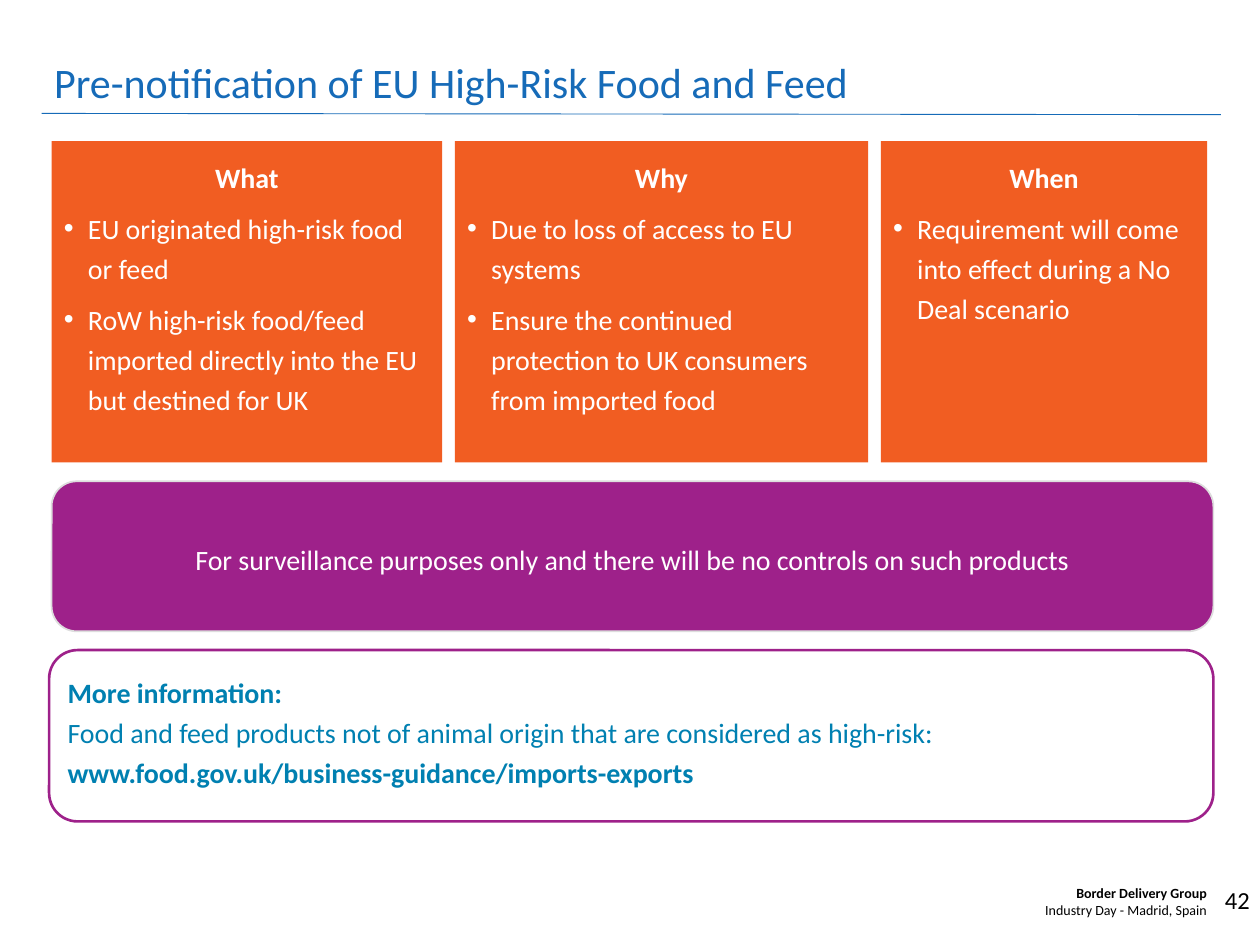
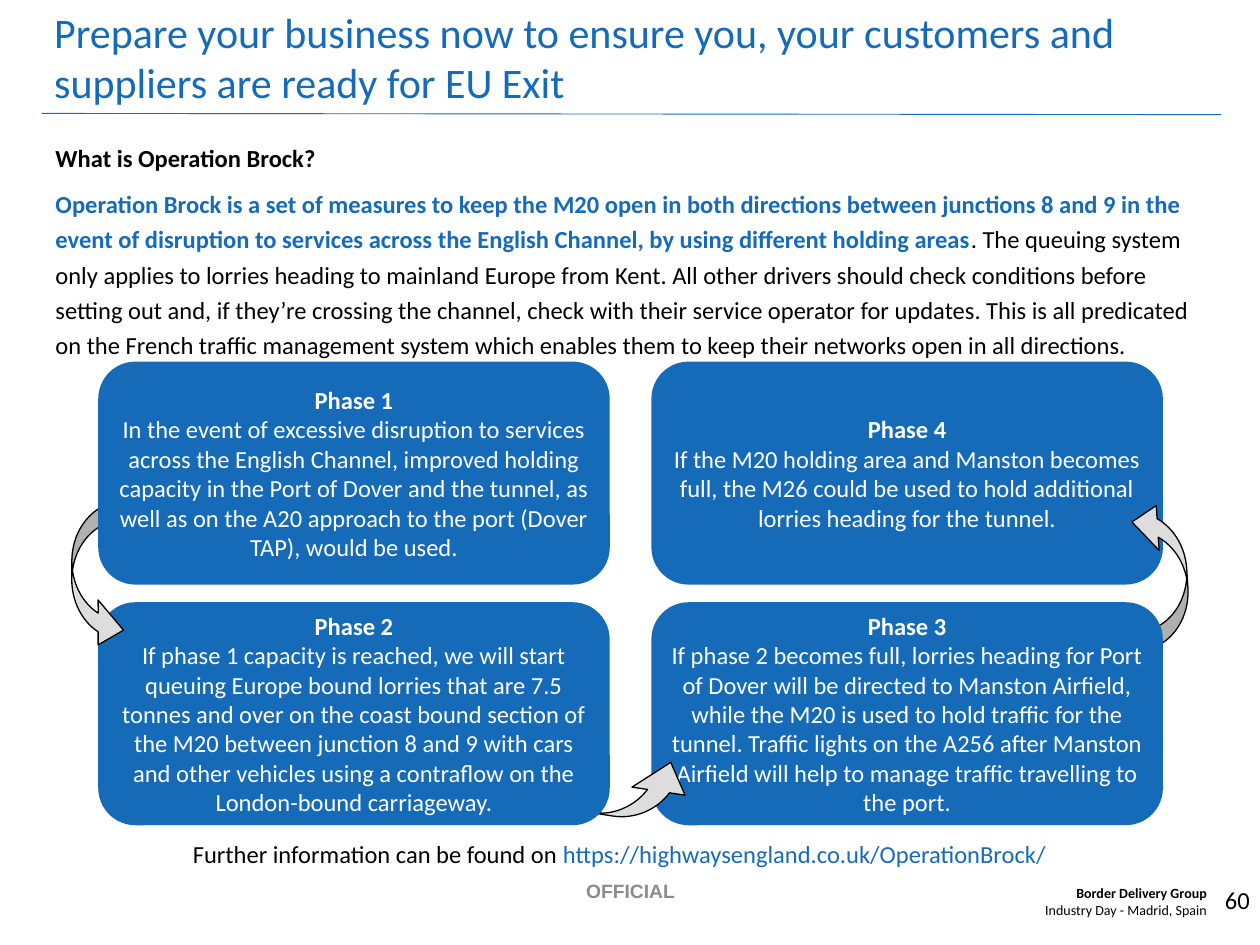
from dataclasses import dataclass
from typing import NamedTuple, Optional, Sequence

from lxml import etree
from pptx import Presentation
from pptx import util as u
from pptx.dml.color import RGBColor
from pptx.enum import shapes, text
from pptx.oxml import ns
from pptx.shapes.autoshape import Shape
from pptx.slide import Slide
from pptx.text.text import TextFrame

LEFT, CENTER, RIGHT = text.PP_ALIGN.LEFT, text.PP_ALIGN.CENTER, text.PP_ALIGN.RIGHT
TOP, MIDDLE, BOTTOM = text.MSO_ANCHOR.TOP, text.MSO_ANCHOR.MIDDLE, text.MSO_ANCHOR.BOTTOM
RECTANGLE = shapes.MSO_SHAPE.RECTANGLE
ROUNDED = shapes.MSO_SHAPE.ROUNDED_RECTANGLE
CURVED_ARROW = shapes.MSO_SHAPE.CURVED_RIGHT_ARROW


@dataclass(frozen=True)
class Theme:
    font: str = "Calibri"
    marking_font: str = "Arial"
    blue: str = "166BB8"
    teal: str = "0080B1"
    orange: str = "F15D22"
    purple: str = "9E218A"
    silver: str = "DDDDDD"
    grey: str = "8C8C8C"
    black: str = "000000"
    white: str = "FFFFFF"
    title: int = 24
    panel: int = 16
    body: int = 14
    marking: int = 11
    footer: int = 8


THEME = Theme()


class Area(NamedTuple):
    left: float
    top: float
    width: float
    height: float


class Span(NamedTuple):
    words: str
    bold: bool = False
    color: Optional[str] = None


class Line(NamedTuple):
    spans: Sequence[Span]
    align: text.PP_ALIGN = LEFT
    bullet: bool = False


class Column(NamedTuple):
    heading: str
    points: Sequence[str]
    width: float


class Arrow(NamedTuple):
    area: Area
    rotation: float


class Phase(NamedTuple):
    number: int
    column: int
    row: int
    details: str
    arrow: Optional[Arrow] = None


TITLE_AREA = Area(0.33, 0.15, 9.35, 0.75)

COLUMNS = [
    Column("What", ["EU originated high-risk food or feed",
                    "RoW high-risk food/feed imported directly into the EU but destined for UK"], 3.1),
    Column("Why", ["Due to loss of access to EU systems",
                   "Ensure the continued protection to UK consumers from imported food"], 3.28),
    Column("When", ["Requirement will come into effect during a No Deal scenario"], 2.59),
]

PHASES = [
    Phase(4, 1, 0, "If the M20 holding area and Manston becomes full, the M26 could be used to hold "
          "additional lorries heading for the tunnel.", Arrow(Area(9.01, 3.95, 0.41, 1.2), 176.3)),
    Phase(3, 1, 1, "If phase 2 becomes full, lorries heading for Port of Dover will be directed to "
          "Manston Airfield, while the M20 is used to hold traffic for the tunnel. Traffic lights on "
          "the A256 after Manston Airfield will help to manage traffic travelling to the port.",
          Arrow(Area(4.63, 5.6, 0.49, 1.26), 278.7)),
    Phase(2, 0, 1, "If phase 1 capacity is reached, we will start queuing Europe bound lorries that "
          "are 7.5 tonnes and over on the coast bound section of the M20 between junction 8 and 9 "
          "with cars and other vehicles using a contraflow on the London-bound carriageway.",
          Arrow(Area(0.57, 3.98, 0.41, 1.2), 0)),
    Phase(1, 0, 0, "In the event of excessive disruption to services across the English Channel, "
          "improved holding capacity in the Port of Dover and the tunnel, as well as on the A20 "
          "approach to the port (Dover TAP), would be used."),
]


def inches(area: Area) -> list[u.Length]:
    return [u.Inches(length) for length in area]


def move(placeholder: Shape, area: Area) -> None:
    placeholder.left, placeholder.top, placeholder.width, placeholder.height = inches(area)


def set_bullet(paragraph, bullet: bool) -> None:
    properties = paragraph._p.get_or_add_pPr()
    indent = u.Inches(0.19) if bullet else 0
    properties.set("marL", str(indent))
    properties.set("indent", str(-indent))
    if bullet:
        etree.SubElement(properties, ns.qn("a:buFont")).set("typeface", THEME.marking_font)
        etree.SubElement(properties, ns.qn("a:buChar")).set("char", "•")
    else:
        etree.SubElement(properties, ns.qn("a:buNone"))


def write(frame: TextFrame, lines: Sequence[Line], *, size: int, color: str,
          font: str = THEME.font, anchor: text.MSO_ANCHOR = TOP,
          insets: tuple[float, float] = (0.1, 0.05), spacing: float = 1.0,
          after: int = 0, wrap: bool = True) -> None:
    frame.word_wrap = wrap
    frame.auto_size = text.MSO_AUTO_SIZE.NONE
    frame.vertical_anchor = anchor
    frame.margin_left = frame.margin_right = u.Inches(insets[0])
    frame.margin_top = frame.margin_bottom = u.Inches(insets[1])
    for index, line in enumerate(lines):
        paragraph = frame.add_paragraph() if index else frame.paragraphs[0]
        set_bullet(paragraph, line.bullet)
        paragraph.alignment = line.align
        paragraph.line_spacing = spacing
        paragraph.space_before = u.Pt(0)
        paragraph.space_after = u.Pt(after)
        for span in line.spans:
            run = paragraph.add_run()
            run.text = span.words.rstrip("\n")
            run.font.name = font
            run.font.size = u.Pt(size)
            run.font.bold = span.bold
            run.font.color.rgb = RGBColor.from_string(span.color or color)
            if span.words.endswith("\n"):
                paragraph.add_line_break()


def add_panel(slide: Slide, kind: shapes.MSO_SHAPE, area: Area, fill: Optional[str] = None,
              outline: Optional[str] = None, weight: float = 1) -> Shape:
    panel = slide.shapes.add_shape(kind, *inches(area))
    panel.shadow.inherit = False
    if fill:
        panel.fill.solid()
        panel.fill.fore_color.rgb = RGBColor.from_string(fill)
    else:
        panel.fill.background()
    if outline:
        panel.line.color.rgb = RGBColor.from_string(outline)
        panel.line.width = u.Pt(weight)
    else:
        panel.line.fill.background()
    return panel


def add_label(slide: Slide, area: Area) -> TextFrame:
    return slide.shapes.add_textbox(*inches(area)).text_frame


def add_base_slide(deck, layout: int, title: str, number: int) -> Slide:
    slide = deck.slides.add_slide(deck.slide_layouts[layout])
    move(slide.shapes.title, TITLE_AREA)
    write(slide.shapes.title.text_frame, [Line([Span(title)])],
          size=THEME.title, color=THEME.blue, anchor=BOTTOM)

    page = add_panel(slide, RECTANGLE, Area(9.69, 7.02, 0.23, 0.24), THEME.white)
    write(page.text_frame, [Line([Span(str(number))], RIGHT)], size=THEME.body,
          color=THEME.black, anchor=MIDDLE, insets=(0, 0), wrap=False)
    write(add_label(slide, Area(7.92, 6.97, 1.76, 0.37)),
          [Line([Span("Border Delivery Group", True)], RIGHT),
           Line([Span("Industry Day - Madrid, Spain")], RIGHT)],
          size=THEME.footer, color=THEME.black)

    rule = slide.shapes.add_connector(shapes.MSO_CONNECTOR.STRAIGHT, u.Inches(0.33),
                                      u.Inches(0.9), u.Inches(9.69), u.Inches(0.91))
    rule.line.color.rgb = RGBColor.from_string(THEME.blue)
    rule.line.width = u.Pt(0.5)
    etree.SubElement(rule._element.spPr, ns.qn("a:effectLst"))
    return slide


def add_columns(slide: Slide) -> None:
    left, gap = 0.41, 0.1
    for column in COLUMNS:
        panel = add_panel(slide, RECTANGLE, Area(left, 1.12, column.width, 2.55), THEME.orange)
        points = [Line([Span(point)], bullet=True) for point in column.points]
        write(panel.text_frame, [Line([Span(column.heading, True)], CENTER), *points],
              size=THEME.panel, color=THEME.white, insets=(0.1, 0.1), spacing=1.2, after=6)
        left += column.width + gap


def add_phases(slide: Slide) -> None:
    for phase in PHASES:
        area = Area(0.78 + phase.column * 4.39, 2.87 + phase.row * 1.91, 4.06, 1.77)
        panel = add_panel(slide, ROUNDED, area, THEME.blue)
        write(panel.text_frame,
              [Line([Span(f"Phase {phase.number}\n", True), Span(phase.details)], CENTER)],
              size=THEME.body, color=THEME.white, anchor=MIDDLE, insets=(0.04, 0.04), after=6)
        if phase.arrow:
            arrow = add_panel(slide, CURVED_ARROW, phase.arrow.area, THEME.silver, THEME.black, 0.75)
            arrow.rotation = phase.arrow.rotation
            for index, value in enumerate((0.36, 0.87, 0.49)):
                arrow.adjustments[index] = value


def build_food_slide(deck) -> None:
    slide = add_base_slide(deck, 5, "Pre-notification of EU High-Risk Food and Feed", 42)
    information = add_panel(slide, ROUNDED, Area(0.39, 5.16, 9.24, 1.36), None, THEME.purple, 1.5)
    write(information.text_frame, [Line([
        Span("More information:\n", True),
        Span("Food and feed products not of animal origin that are considered as high-risk: "),
        Span("www.food.gov.uk/business-guidance/imports-exports", True),
    ])], size=THEME.panel, color=THEME.teal, insets=(0.08, 0.08), spacing=1.2, after=6)
    add_columns(slide)
    surveillance = add_panel(slide, ROUNDED, Area(0.41, 3.82, 9.22, 1.19),
                             THEME.purple, THEME.silver)
    write(surveillance.text_frame, [Line([Span(
        "For surveillance purposes only and there will be no controls on such products")], CENTER)],
        size=THEME.panel, color=THEME.white, anchor=MIDDLE, insets=(0.08, 0.08),
        spacing=1.2, after=6)


def build_brock_slide(deck) -> None:
    slide = add_base_slide(deck, 1, "Prepare your business now to ensure you, your customers and "
                           "suppliers are ready for EU Exit", 60)
    introduction = slide.placeholders[1]
    move(introduction, Area(0.35, 1.04, 9.35, 6.11))
    write(introduction.text_frame, [
        Line([Span("What is Operation Brock?", True)]),
        Line([
            Span("Operation Brock is a set of measures to keep the M20 open in both directions "
                 "between junctions 8 and 9 in the event of disruption to services across the "
                 "English Channel, by using different holding areas", True, THEME.blue),
            Span(". The queuing system only applies to lorries heading to mainland Europe from "
                 "Kent. All other drivers should check conditions before setting out and, if "
                 "they’re crossing the channel, check with their service operator for updates. "
                 "This is all predicated on the French traffic management system which enables "
                 "them to keep their networks open in all directions."),
        ]),
    ], size=THEME.body, color=THEME.black, insets=(0.09, 0.05), spacing=1.2, after=6)
    add_phases(slide)
    write(add_label(slide, Area(1.49, 6.62, 7.02, 0.32)), [Line([
        Span("Further information can be found on "),
        Span("https://highwaysengland.co.uk/OperationBrock/", color=THEME.blue),
    ])], size=THEME.body, color=THEME.black, insets=(0.04, 0.04))
    write(add_label(slide, Area(3.4, 6.93, 3.21, 0.4)), [Line([Span("OFFICIAL", True)], CENTER)],
          size=THEME.marking, color=THEME.grey, font=THEME.marking_font)


def main() -> None:
    deck = Presentation()
    deck.slide_width, deck.slide_height = u.Inches(10), u.Inches(7.5)
    build_food_slide(deck)
    build_brock_slide(deck)
    deck.save("out.pptx")


if __name__ == "__main__":
    main()
